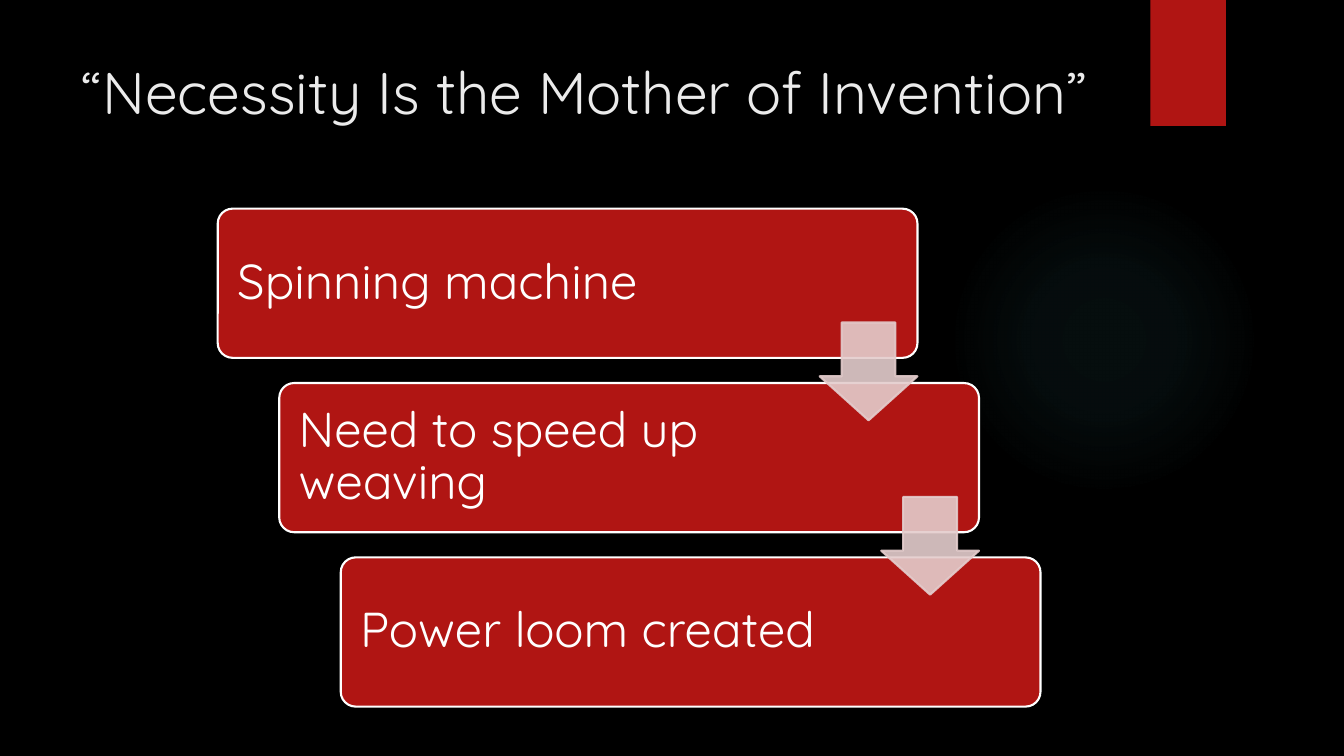
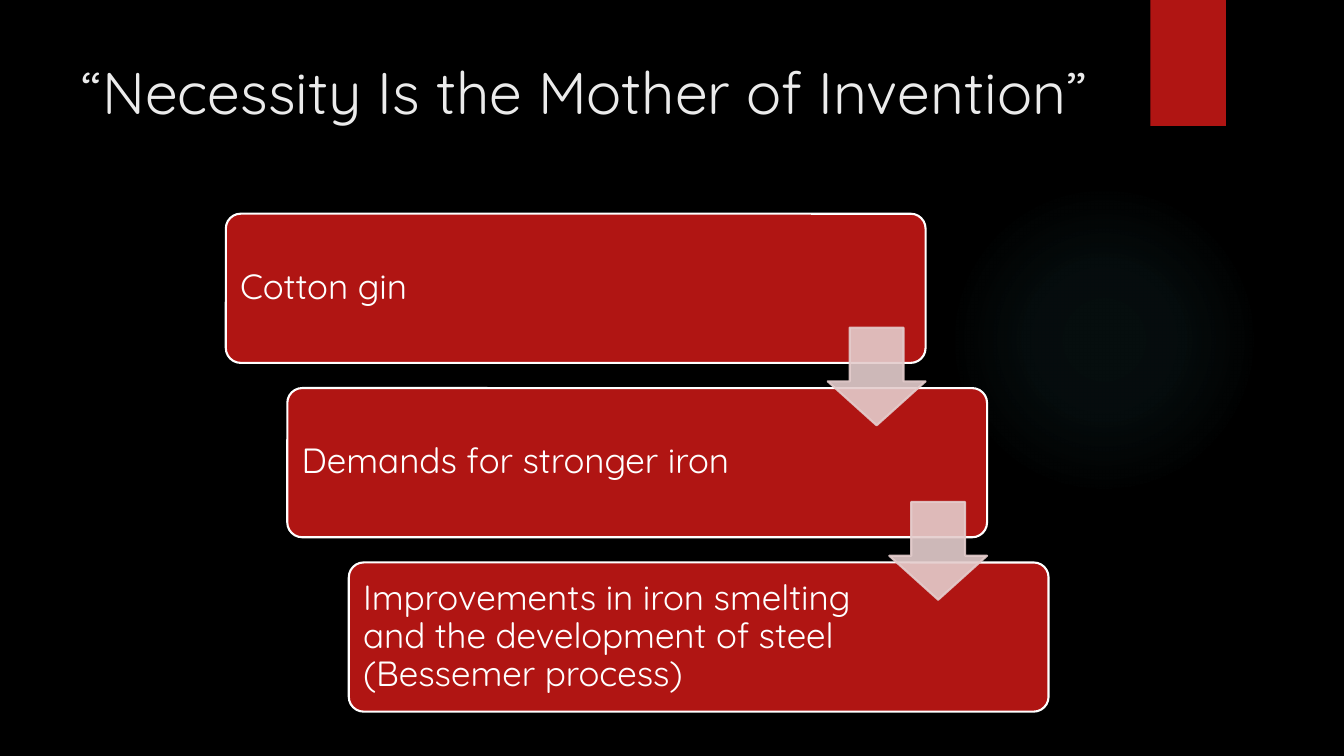
from dataclasses import dataclass

from lxml import etree
from pptx import Presentation
from pptx.dml.color import RGBColor
from pptx.enum.shapes import MSO_SHAPE
from pptx.enum.text import MSO_ANCHOR, MSO_AUTO_SIZE, PP_ALIGN
from pptx.oxml import parse_xml
from pptx.oxml.ns import nsdecls, qn
from pptx.util import Inches, Pt

RECTANGLE = MSO_SHAPE.RECTANGLE
ROUNDED = MSO_SHAPE.ROUNDED_RECTANGLE
OVAL = MSO_SHAPE.OVAL
DOWN_ARROW = MSO_SHAPE.DOWN_ARROW
TOP, MIDDLE = MSO_ANCHOR.TOP, MSO_ANCHOR.MIDDLE
LEFT = PP_ALIGN.LEFT
NO_AUTOFIT = MSO_AUTO_SIZE.NONE

COLORS = {
    "background": "000000",
    "red": "B01513",
    "glow": "50B9C1",
    "title": "EBEBEB",
    "white": "FFFFFF",
    "arrow": "E4CCCC",
}
FONT = "Quicksand"
TITLE = "“Necessity Is the Mother of Invention”"
TITLE_ONLY = 5

# Staircase geometry, in inches
BOX_WIDTH, BOX_HEIGHT = 6.94, 1.48
STEP_RIGHT, STEP_DOWN = 0.61, 1.73
ARROW_SIZE = 0.97
ARROW_RIGHT, ARROW_DOWN = BOX_WIDTH - ARROW_SIZE, 1.13
ARROW_LANE = 1.58  # kept free of text at the right of each box
GLOW_STOPS = ((0, 7), (36, 6), (69, 0))  # position and opacity, percent


@dataclass(frozen=True)
class Staircase:
    left: float
    top: float
    font_size: int
    inset: float
    steps: tuple[str, ...]


STAIRCASES = (
    Staircase(2.16, 2.07, 35, 0.15,
              ("Spinning machine", "Need to speed up weaving", "Power loom created")),
    Staircase(2.24, 2.12, 25, 0.1,
              ("Cotton gin", "Demands for stronger iron",
               "Improvements in iron smelting and the development of steel (Bessemer process)")),
)


def rgb(name: str) -> RGBColor:
    return RGBColor.from_string(COLORS[name])


def add_block(page, kind, left: float, top: float, width: float, height: float,
              fill: str, line: str | None = None):
    """Add a flat preset shape with an optional outline."""
    shape = page.shapes.add_shape(kind, Inches(left), Inches(top), Inches(width), Inches(height))
    shape.shadow.inherit = False
    shape.fill.solid()
    shape.fill.fore_color.rgb = rgb(fill)
    if line:
        shape.line.color.rgb = rgb(line)
        shape.line.width = Pt(1.5)
    else:
        shape.line.fill.background()
    return shape


def set_opacity(shape, percent: int) -> None:
    """Make the fill and the outline translucent."""
    for color in shape._element.spPr.iter(qn("a:srgbClr")):
        etree.SubElement(color, qn("a:alpha")).set("val", str(percent * 1000))


def add_glow(page) -> None:
    glow = add_block(page, OVAL, 9.41, 1.83, 3.08, 3.08, "glow")
    stops = "".join(
        f'<a:gs pos="{position * 1000}"><a:srgbClr val="{COLORS["glow"]}">'
        f'<a:alpha val="{opacity * 1000}"/></a:srgbClr></a:gs>'
        for position, opacity in GLOW_STOPS)
    gradient = parse_xml(
        f'<a:gradFill {nsdecls("a")}><a:gsLst>{stops}</a:gsLst><a:path path="circle">'
        '<a:fillToRect l="50000" t="50000" r="50000" b="50000"/></a:path></a:gradFill>')
    properties = glow._element.spPr
    properties.replace(properties.find(qn("a:solidFill")), gradient)


def style_text(frame, text: str, size: int, color: str, anchor) -> None:
    frame.text = text
    frame.word_wrap = True
    frame.auto_size = NO_AUTOFIT
    frame.vertical_anchor = anchor
    para = frame.paragraphs[0]
    para.alignment = LEFT
    for span in para.runs:
        span.font.name = FONT
        span.font.size = Pt(size)
        span.font.color.rgb = rgb(color)


def add_page(deck):
    """Add a page with the shared glow, ribbon and title."""
    page = deck.slides.add_slide(deck.slide_layouts[TITLE_ONLY])
    add_glow(page)
    add_block(page, RECTANGLE, 11.41, 0, 0.75, 1.25, "red")
    title = page.shapes.title
    title.left, title.top = Inches(0.71), Inches(0.5)
    title.width, title.height = Inches(10.29), Inches(1.53)
    style_text(title.text_frame, TITLE, 42, "title", TOP)
    return page


def add_staircase(page, stairs: Staircase) -> None:
    corners = [(stairs.left + index * STEP_RIGHT, stairs.top + index * STEP_DOWN)
               for index in range(len(stairs.steps))]
    # Boxes
    for (left, top), text in zip(corners, stairs.steps):
        box = add_block(page, ROUNDED, left, top, BOX_WIDTH, BOX_HEIGHT, "red", "white")
        box.adjustments[0] = 0.1
        frame = box.text_frame
        style_text(frame, text, stairs.font_size, "white", MIDDLE)
        frame.paragraphs[0].line_spacing = 0.9
        frame.margin_left = frame.margin_top = frame.margin_bottom = Inches(stairs.inset)
        frame.margin_right = Inches(stairs.inset + ARROW_LANE)
    # Arrows from each box to the next
    for left, top in corners[:-1]:
        arrow = add_block(page, DOWN_ARROW, left + ARROW_RIGHT, top + ARROW_DOWN,
                          ARROW_SIZE, ARROW_SIZE, "arrow", "arrow")
        arrow.adjustments[0] = 0.55
        arrow.adjustments[1] = 0.45
        set_opacity(arrow, 90)


def main() -> None:
    deck = Presentation()
    deck.slide_width, deck.slide_height = Inches(13.33), Inches(7.5)
    backdrop = deck.slide_master.background.fill
    backdrop.solid()
    backdrop.fore_color.rgb = rgb("background")
    for stairs in STAIRCASES:
        add_staircase(add_page(deck), stairs)
    deck.save("out.pptx")


if __name__ == "__main__":
    main()
